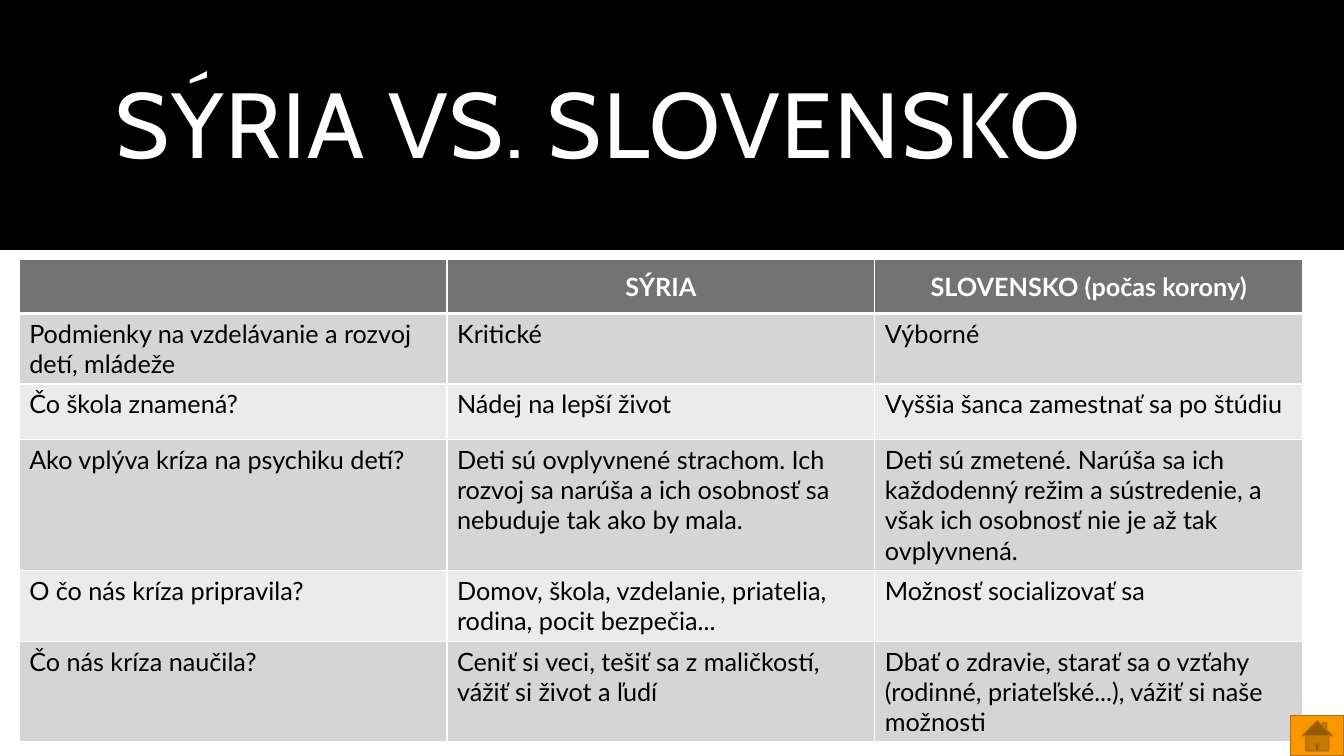
from lxml import etree
from pptx import Presentation
from pptx import util as u
from pptx.dml.color import RGBColor
from pptx.enum import shapes, text
from pptx.oxml import ns

HUES = {
    "black": "000000", "white": "FFFFFF", "head": "737373",
    "odd": "D5D5D5", "even": "EBEBEB", "gold": "F99700", "edge": "B87000",
}
ROWS = [
    ("", "SÝRIA", "SLOVENSKO (počas korony)"),
    ("Podmienky na vzdelávanie a rozvoj detí, mládeže", "Kritické", "Výborné"),
    ("Čo škola znamená?", "Nádej na lepší život",
     "Vyššia šanca zamestnať sa po štúdiu"),
    ("Ako vplýva kríza na psychiku detí?",
     "Deti sú ovplyvnené strachom. Ich rozvoj sa narúša a ich osobnosť sa "
     "nebuduje tak ako by mala.",
     "Deti sú zmetené. Narúša sa ich každodenný režim a sústredenie, a však "
     "ich osobnosť nie je až tak ovplyvnená."),
    ("O čo nás kríza pripravila?",
     "Domov, škola, vzdelanie, priatelia, rodina, pocit bezpečia...",
     "Možnosť socializovať sa"),
    ("Čo nás kríza naučila?",
     "Ceniť si veci, tešiť sa z maličkostí, vážiť si život a ľudí",
     "Dbať o zdravie, starať sa o vzťahy (rodinné, priateľské...), vážiť si "
     "naše možnosti"),
]
HEIGHTS = [0.54, 0.7, 0.55, 1.3, 0.7, 1]


def hue(name):
    return RGBColor.from_string(HUES[name])


def write(frame, words, size=18, font="Lato", color="black", bold=False,
          align=text.PP_ALIGN.LEFT, space=1.0, track=0):
    frame.word_wrap = True
    par = frame.paragraphs[0]
    par.alignment = align
    par.line_spacing = space
    if not words:
        par.font.size = u.Pt(size)
        return
    run = par.add_run()
    run.text = words
    run.font.size = u.Pt(size)
    run.font.name = font
    run.font.bold = bold
    run.font.color.rgb = hue(color)
    if track:
        run.font._element.set("spc", str(track))


deck = Presentation()
deck.slide_width = u.Inches(13.33)
deck.slide_height = u.Inches(7.5)
slide = deck.slides.add_slide(deck.slide_layouts[6])

band = slide.shapes.add_shape(
    shapes.MSO_SHAPE.RECTANGLE, 0, 0, deck.slide_width, u.Inches(2.48))
band.shadow.inherit = False
band.fill.solid()
band.fill.fore_color.rgb = hue("black")
band.line.fill.background()

title = slide.shapes.add_textbox(
    u.Inches(1.05), u.Inches(0.35), u.Inches(11.23), u.Inches(1.86))
title.text_frame.vertical_anchor = text.MSO_ANCHOR.MIDDLE
write(title.text_frame, "SÝRIA VS. SLOVENSKO", size=66, font="Cabin",
      color="white", space=0.9, track=120)

table = slide.shapes.add_table(
    len(ROWS), 3, u.Inches(0.19), u.Inches(2.57),
    u.Inches(12.73), u.Inches(sum(HEIGHTS))).table
for col in table.columns:
    col.width = u.Inches(12.73 / 3)

for i, (row, high) in enumerate(zip(ROWS, HEIGHTS)):
    table.rows[i].height = u.Inches(high)
    for j, words in enumerate(row):
        cell = table.cell(i, j)
        props = cell._tc.get_or_add_tcPr()
        for side in "LRTB":
            thick = (i, side) in [(0, "B"), (1, "T")]
            line = etree.SubElement(props, ns.qn("a:ln" + side),
                                    w=str(u.Pt(3 if thick else 1)))
            fill = etree.SubElement(line, ns.qn("a:solidFill"))
            etree.SubElement(fill, ns.qn("a:srgbClr"), val=HUES["white"])
        cell.fill.solid()
        if i == 0:
            cell.fill.fore_color.rgb = hue("head")
            cell.vertical_anchor = text.MSO_ANCHOR.MIDDLE
            write(cell.text_frame, words, color="white", bold=True,
                  align=text.PP_ALIGN.CENTER)
        else:
            cell.fill.fore_color.rgb = hue("odd" if i % 2 else "even")
            write(cell.text_frame, words)

home = slide.shapes.add_shape(
    shapes.MSO_SHAPE.ACTION_BUTTON_HOME,
    u.Inches(12.8), u.Inches(7.1), u.Inches(0.53), u.Inches(0.4))
home.shadow.inherit = False
home.fill.solid()
home.fill.fore_color.rgb = hue("gold")
home.line.color.rgb = hue("edge")
home.line.width = u.Pt(1)

deck.save("out.pptx")
